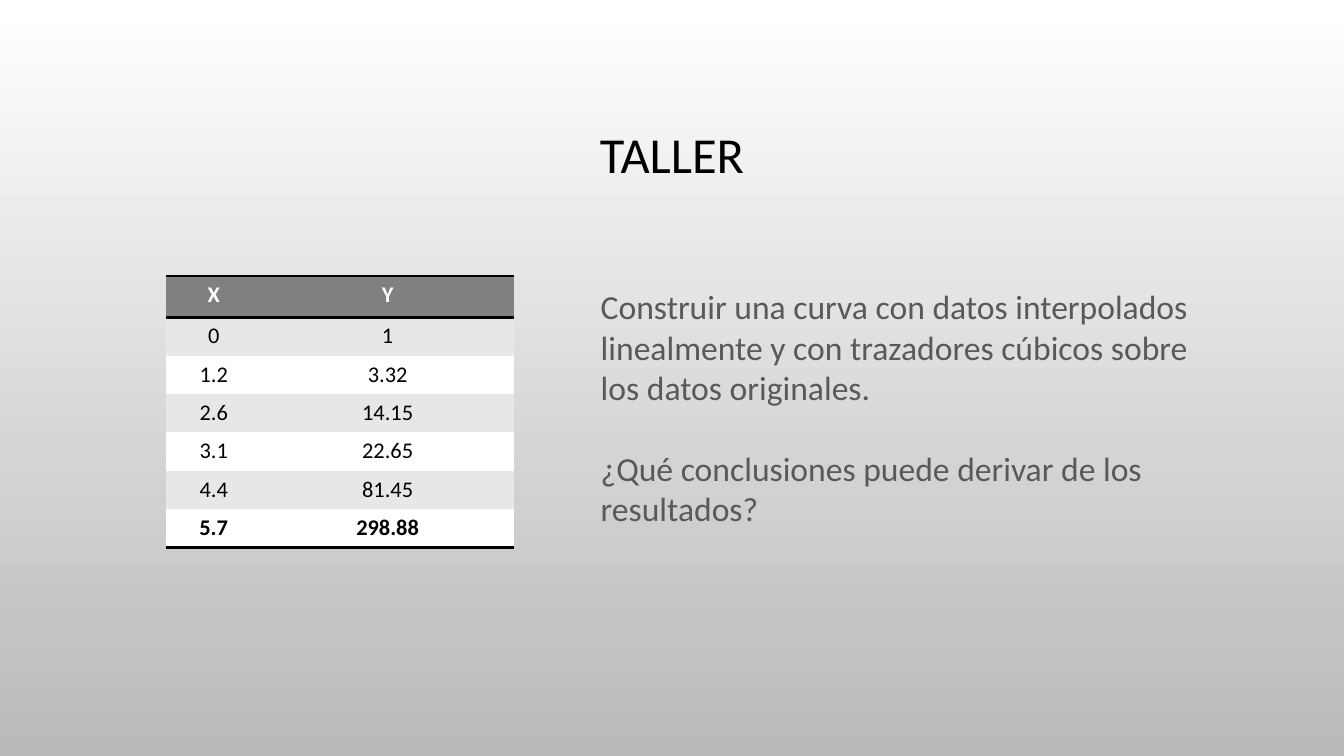
from lxml import etree
from pptx import Presentation
from pptx import util as u
from pptx.dml.color import RGBColor
from pptx.enum import text
from pptx.oxml import ns

DATA = [("X", "Y"), ("0", "1"), ("1.2", "3.32"), ("2.6", "14.15"),
        ("3.1", "22.65"), ("4.4", "81.45"), ("5.7", "298.88")]
TASK = ["Construir una curva con datos interpolados linealmente y con "
        "trazadores cúbicos sobre los datos originales.",
        "¿Qué conclusiones puede derivar de los resultados?"]
PLAIN = "{2D5ABB26-0587-4C30-8999-92F81FD0307C}"


def color(code):
    """Turn a hex string into a colour."""
    return RGBColor.from_string(code)


def style(par, size, code, bold=False):
    """Format the runs of a paragraph."""
    for run in par.runs:
        run.font.name, run.font.size, run.font.bold = "Calibri", u.Pt(size), bold
        run.font.color.rgb = color(code)


def border(cell, tag):
    """Draw a black rule on one edge of a cell."""
    line = etree.Element(ns.qn(tag), w=str(u.Pt(2)))
    fill = etree.SubElement(line, ns.qn("a:solidFill"))
    etree.SubElement(fill, ns.qn("a:srgbClr"), val="000000")
    cell._tc.get_or_add_tcPr().insert(0, line)


def backdrop(slide):
    """Fill the slide from white down to grey."""
    fill = slide.background.fill
    fill.gradient()
    fill.gradient_angle = 270
    for stop, code in zip(fill.gradient_stops, ("FFFFFF", "B9B9B9")):
        stop.color.rgb = color(code)


def heading(slide, box):
    """Place the centred title."""
    title = slide.shapes.title
    title.left, title.top, title.width, title.height = map(u.Inches, box)
    frame = title.text_frame
    frame.text = "TALLER"
    frame.auto_size = text.MSO_AUTO_SIZE.NONE
    frame.vertical_anchor = text.MSO_ANCHOR.MIDDLE
    par = frame.paragraphs[0]
    par.alignment, par.line_spacing = text.PP_ALIGN.CENTER, 0.9
    style(par, 36, "000000")


def grid(slide, box):
    """Place the table of points with ruled head and foot."""
    last = len(DATA) - 1
    table = slide.shapes.add_table(len(DATA), 2, *map(u.Inches, box)).table
    table._tbl.tblPr.find(ns.qn("a:tableStyleId")).text = PLAIN
    table.last_row = True
    table.columns[0].width = u.Inches(0.94)
    table.columns[1].width = u.Inches(box[2] - 0.94)
    for i, row in enumerate(DATA):
        table.rows[i].height = u.Inches(0.38 if i else box[3] - 0.38 * last)
        for j, value in enumerate(row):
            cell = table.cell(i, j)
            cell.text = value
            cell.fill.solid()
            shade = "E7E7E7" if i % 2 else "FFFFFF"
            cell.fill.fore_color.rgb = color(shade if i else "808080")
            par = cell.text_frame.paragraphs[0]
            par.alignment = text.PP_ALIGN.CENTER
            style(par, 16, "000000" if i else "FFFFFF", i in (0, last))
            if i in (0, last):
                border(cell, "a:lnB")
            if i == 0:
                border(cell, "a:lnT")


def brief(slide, box):
    """Place the task and its question."""
    frame = slide.shapes.add_textbox(*map(u.Inches, box)).text_frame
    frame.word_wrap = True
    frame.auto_size = text.MSO_AUTO_SIZE.SHAPE_TO_FIT_TEXT
    frame.text = "\n".join(TASK)
    for par in frame.paragraphs:
        style(par, 24, "595959")
    frame.paragraphs[1].space_before = u.Pt(29)


def main():
    """Build and save the slide."""
    deck = Presentation()
    deck.slide_width, deck.slide_height = u.Inches(13.33), u.Inches(7.5)
    slide = deck.slides.add_slide(deck.slide_layouts[5])
    backdrop(slide)
    heading(slide, (1, 0.68, 11.33, 1.75))
    grid(slide, (1.65, 2.74, 3.45, 2.69))
    brief(slide, (5.86, 2.79, 6.47, 2.52))
    deck.save("out.pptx")


if __name__ == "__main__":
    main()
